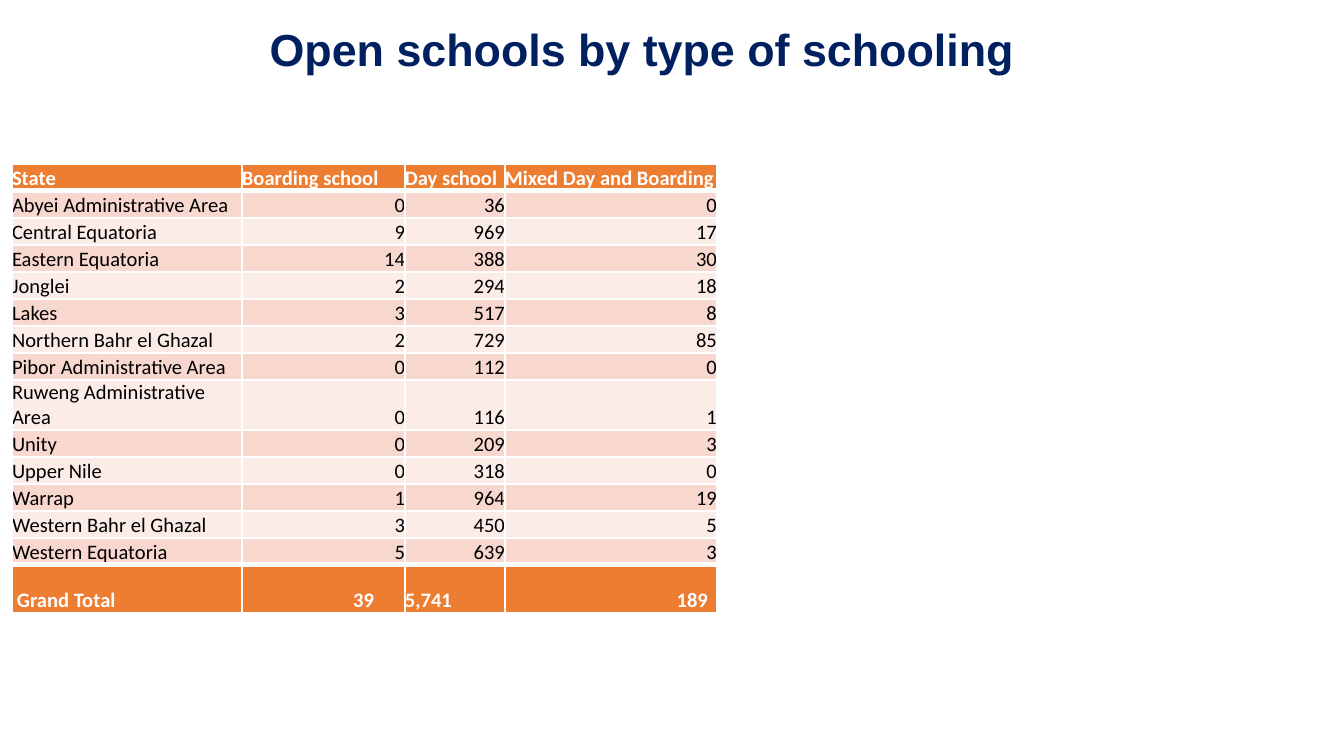
from dataclasses import dataclass

from pptx import Presentation
from pptx.dml.color import RGBColor
from pptx.enum.text import MSO_ANCHOR, PP_ALIGN
from pptx.oxml.ns import qn
from pptx.util import Emu, Pt
from lxml.etree import SubElement

PX_PER_INCH = 134.4


@dataclass(frozen=True)
class Theme:
    title_font: str = "Arial"
    table_font: str = "Calibri"
    title_size: int = 24
    table_size: int = 11
    navy: str = "002060"
    orange: str = "ED7D31"
    band_dark: str = "F8D7CE"
    band_light: str = "FCECE8"
    white: str = "FFFFFF"
    black: str = "000000"
    thin: int = 1
    thick: int = 3


THEME = Theme()

HEADER = ("State", "Boarding school", "Day school", "Mixed Day and Boarding")
STATES = (
    ("Abyei Administrative Area", 0, 36, 0),
    ("Central Equatoria", 9, 969, 17),
    ("Eastern Equatoria", 14, 388, 30),
    ("Jonglei", 2, 294, 18),
    ("Lakes", 3, 517, 8),
    ("Northern Bahr el Ghazal", 2, 729, 85),
    ("Pibor Administrative Area", 0, 112, 0),
    ("Ruweng Administrative Area", 0, 116, 1),
    ("Unity", 0, 209, 3),
    ("Upper Nile", 0, 318, 0),
    ("Warrap", 1, 964, 19),
    ("Western Bahr el Ghazal", 3, 450, 5),
    ("Western Equatoria", 5, 639, 3),
)
# Grand total: text, alignment, left and right inset in px
TOTALS = (
    ("Grand Total", PP_ALIGN.LEFT, 5, 0),
    ("39", PP_ALIGN.RIGHT, 0, 31),
    ("5,741", PP_ALIGN.LEFT, 0, 0),
    ("189", PP_ALIGN.RIGHT, 0, 9),
)
COL_WIDTHS = (230, 163, 100, 212)
ROW_HEIGHT, WRAPPED_HEIGHT, TOTAL_HEIGHT = 27, 50, 48
WRAPPED_STATE = "Ruweng Administrative Area"


def px(n):
    return Emu(round(n * 914400 / PX_PER_INCH))


def write_text(tf, text, *, font, size, color, bold=False, align=PP_ALIGN.LEFT):
    p = tf.paragraphs[0]
    p.alignment = align
    r = p.add_run()
    r.text = text
    r.font.name = font
    r.font.size = Pt(size)
    r.font.bold = bold
    r.font.color.rgb = RGBColor.from_string(color)
    return p


def add_title(slide, text):
    sp = slide.shapes.add_textbox(px(23), px(7), px(1250), px(91))
    tf = sp.text_frame
    tf.word_wrap = True
    tf.vertical_anchor = MSO_ANCHOR.MIDDLE
    p = write_text(tf, text, font=THEME.title_font, size=THEME.title_size,
                   color=THEME.navy, bold=True, align=PP_ALIGN.CENTER)
    p.line_spacing = 0.9
    p.space_after = Pt(6)


def set_borders(cell, top, bottom):
    tc_pr = cell._tc.get_or_add_tcPr()
    widths = {"a:lnL": THEME.thin, "a:lnR": THEME.thin,
              "a:lnT": top, "a:lnB": bottom}
    for tag, width in widths.items():
        ln = SubElement(tc_pr, qn(tag), w=str(Pt(width)))
        fill = SubElement(ln, qn("a:solidFill"))
        SubElement(fill, qn("a:srgbClr"), val=THEME.white)


def fill_cell(cell, text, *, fill, color=THEME.black, bold=False,
              align=PP_ALIGN.LEFT, left=0, right=0,
              top=THEME.thin, bottom=THEME.thin):
    cell.margin_left, cell.margin_right = px(left), px(right)
    cell.margin_top = cell.margin_bottom = 0
    cell.vertical_anchor = MSO_ANCHOR.BOTTOM
    write_text(cell.text_frame, text, font=THEME.table_font,
               size=THEME.table_size, color=color, bold=bold, align=align)
    set_borders(cell, top, bottom)  # borders come before the fill in the XML
    cell.fill.solid()
    cell.fill.fore_color.rgb = RGBColor.from_string(fill)


def add_school_table(slide):
    heights = [ROW_HEIGHT]
    heights += [WRAPPED_HEIGHT if state[0] == WRAPPED_STATE else ROW_HEIGHT
                for state in STATES]
    heights.append(TOTAL_HEIGHT)
    table = slide.shapes.add_table(
        len(heights), len(COL_WIDTHS), px(12), px(164),
        px(sum(COL_WIDTHS)), px(sum(heights))).table
    for col, width in zip(table.columns, COL_WIDTHS):
        col.width = px(width)
    for row, height in zip(table.rows, heights):
        row.height = px(height)

    # Header
    strong = dict(fill=THEME.orange, color=THEME.white, bold=True)
    for c, text in enumerate(HEADER):
        fill_cell(table.cell(0, c), text, bottom=THEME.thick, **strong)

    # Banded state rows
    last = len(STATES)
    for r, state in enumerate(STATES, 1):
        for c, value in enumerate(state):
            fill_cell(table.cell(r, c), str(value),
                      fill=THEME.band_dark if r % 2 else THEME.band_light,
                      align=PP_ALIGN.RIGHT if c else PP_ALIGN.LEFT,
                      top=THEME.thick if r == 1 else THEME.thin,
                      bottom=THEME.thick if r == last else THEME.thin)

    # Grand total
    for c, (text, align, left, right) in enumerate(TOTALS):
        fill_cell(table.cell(last + 1, c), text, align=align, left=left,
                  right=right, top=THEME.thick, **strong)


def main():
    prs = Presentation()
    prs.slide_width, prs.slide_height = px(1344), px(756)
    slide = prs.slides.add_slide(prs.slide_layouts[6])
    add_title(slide, "Open schools by type of schooling ")
    add_school_table(slide)
    prs.save("out.pptx")


if __name__ == "__main__":
    main()
